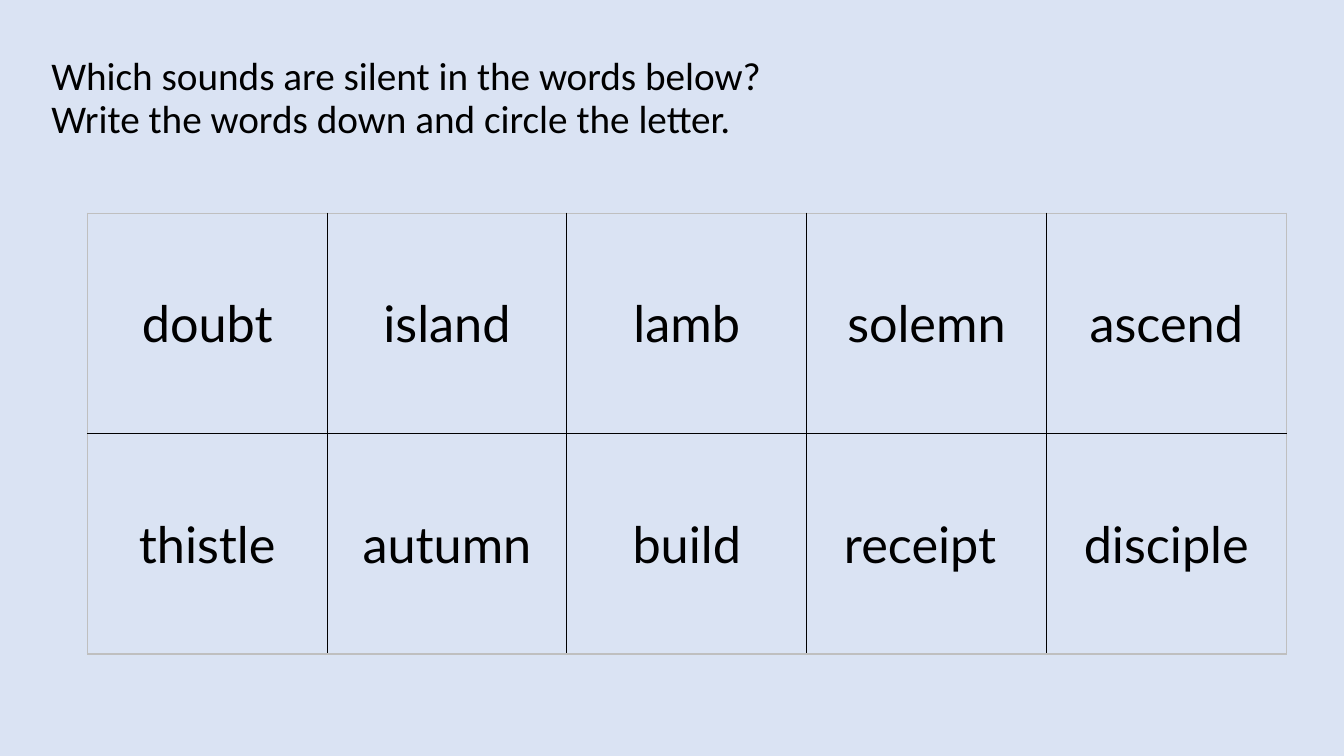
from lxml.etree import SubElement
from pptx import Presentation
from pptx.dml.color import RGBColor
from pptx.enum.text import MSO_ANCHOR, PP_ALIGN
from pptx.oxml.ns import qn
from pptx.util import Inches, Pt

BLACK = RGBColor(0x00, 0x00, 0x00)
GREY = RGBColor(0xBF, 0xBF, 0xBF)
PALE = RGBColor(0xDA, 0xE3, 0xF3)

TITLE = "Which sounds are silent in the words below?\vWrite the words down and circle the letter."
WORDS = [
    ["doubt", "island", "lamb", "solemn", "ascend"],
    ["thistle", "autumn", "build", "receipt ", "disciple"],
]


class Board:
    """Style and current slide; lengths are percent of the slide's size."""

    def __init__(self, deck):
        self.wide, self.high = deck.slide_width, deck.slide_height
        self.slide = deck.slides.add_slide(deck.slide_layouts[6])
        self.slide.background.fill.solid()
        self.slide.background.fill.fore_color.rgb = PALE

    def area(self, left, top, width, height):
        return (int(self.wide * left / 100), int(self.high * top / 100),
                int(self.wide * width / 100), int(self.high * height / 100))

    def style(self, para, font, size):
        for run in para.runs:
            run.font.name = font
            run.font.size = Pt(size)
            run.font.bold = False
            run.font.color.rgb = BLACK

    def title(self, text, *place):
        frame = self.slide.shapes.add_textbox(*self.area(*place)).text_frame
        frame.word_wrap = True
        frame.vertical_anchor = MSO_ANCHOR.MIDDLE
        frame.text = text
        para = frame.paragraphs[0]
        para.line_spacing = 0.9
        self.style(para, "Calibri", 28)

    def edge(self, cell, side, color):
        line = SubElement(cell._tc.get_or_add_tcPr(), qn(f"a:ln{side}"), w=str(Pt(1)))
        fill = SubElement(line, qn("a:solidFill"))
        SubElement(fill, qn("a:srgbClr"), val=str(color))

    def table(self, words, *place):
        rows, cols = len(words), len(words[0])
        grid = self.slide.shapes.add_table(rows, cols, *self.area(*place)).table
        grid.first_row = grid.horz_banding = False
        for r, row in enumerate(words):
            for c, word in enumerate(row):
                cell = grid.cell(r, c)
                # Grey outer frame, black inner lines
                outer = {"L": c == 0, "R": c == cols - 1, "T": r == 0, "B": r == rows - 1}
                for side, rim in outer.items():
                    self.edge(cell, side, GREY if rim else BLACK)
                cell.fill.background()
                # Centred word
                cell.vertical_anchor = MSO_ANCHOR.MIDDLE
                cell.text_frame.text = word
                para = cell.text_frame.paragraphs[0]
                para.alignment = PP_ALIGN.CENTER
                self.style(para, "Lato", 36)


def main():
    deck = Presentation()
    deck.slide_width, deck.slide_height = Inches(13.33), Inches(7.5)
    board = Board(deck)
    # Task
    board.title(TITLE, 3.08, 3.47, 75.62, 19.33)
    # Word grid
    board.table(WORDS, 6.5, 28.2, 89.2, 58.3)
    deck.save("out.pptx")


if __name__ == "__main__":
    main()
